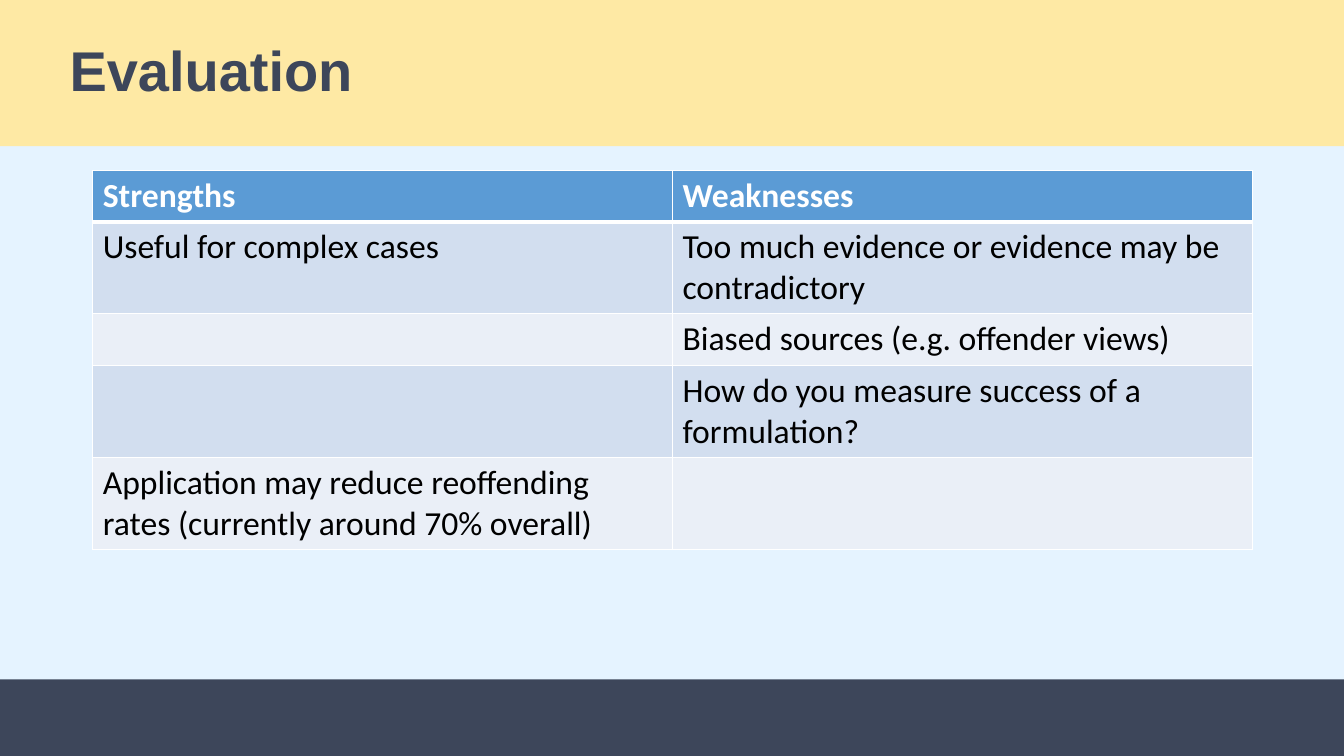
from lxml.etree import SubElement
from pptx import Presentation
from pptx.dml.color import RGBColor as RGB
from pptx.enum.shapes import MSO_SHAPE as SHAPE
from pptx.enum.text import MSO_ANCHOR as ANCHOR, PP_ALIGN as ALIGN
from pptx.oxml.ns import qn
from pptx.util import Pt

PX = 9144
COLORS = {
    "sky": "E5F3FF", "navy": "3D465A", "cream": "FEE9A4", "header": "5B9BD5",
    "odd": "D2DEEF", "even": "EAEFF7", "white": "FFFFFF", "black": "000000",
}
ROWS = [
    ("Strengths", "Weaknesses"),
    ("Useful for complex cases", "Too much evidence or evidence may be contradictory"),
    ("", "Biased sources (e.g. offender views)"),
    ("", "How do you measure success of a formulation?"),
    ("Application may reduce reoffending rates (currently around 70% overall)", ""),
]
ROW_HEIGHTS = [51, 91, 51, 91, 91]


class Slide:
    def __init__(self, prs):
        self.s = prs.slides.add_slide(prs.slide_layouts[6])
        self.body_font, self.title_font = "Calibri", "Arial"
        fill = self.s.background.fill
        fill.solid()
        fill.fore_color.rgb = self.color("sky")

    def color(self, name):
        return RGB.from_string(COLORS[name])

    def style(self, p, font, size, color, bold):
        for r in p.runs:
            r.font.name, r.font.size, r.font.bold = font, Pt(size), bold
            r.font.color.rgb = self.color(color)

    def band(self, y, h, color):
        sp = self.s.shapes.add_shape(SHAPE.RECTANGLE, 0, y * PX, 1333 * PX, h * PX)
        sp.shadow.inherit = False
        sp.fill.solid()
        sp.fill.fore_color.rgb = self.color(color)
        sp.line.fill.background()
        return sp

    def title(self, text, h):
        tf = self.band(0, h, "cream").text_frame
        tf.word_wrap = True
        tf.vertical_anchor = ANCHOR.MIDDLE
        tf.margin_left = 69 * PX
        p = tf.paragraphs[0]
        p.text = text
        p.alignment, p.line_spacing = ALIGN.LEFT, 0.9
        self.style(p, self.title_font, 40, "navy", True)

    def border(self, cell, side, width):
        ln = SubElement(cell._tc.get_or_add_tcPr(), qn(f"a:ln{side}"), w=str(Pt(width)))
        fill = SubElement(ln, qn("a:solidFill"))
        SubElement(fill, qn("a:srgbClr"), val=COLORS["white"])

    def cell(self, cell, text, row):
        header = row == 0
        thick = {"B": 3} if header else {"T": 3} if row == 1 else {}
        for side in "LRTB":
            self.border(cell, side, thick.get(side, 1))
        cell.fill.solid()
        cell.fill.fore_color.rgb = self.color("header" if header else "odd" if row % 2 else "even")
        p = cell.text_frame.paragraphs[0]
        p.text = text
        self.style(p, self.body_font, 24, "white" if header else "black", header)

    def table(self, x, y, w, rows, heights):
        cols = len(rows[0])
        table = self.s.shapes.add_table(
            len(rows), cols, x * PX, y * PX, w * PX, sum(heights) * PX).table
        for i, (texts, h) in enumerate(zip(rows, heights)):
            table.rows[i].height = h * PX
            for j, text in enumerate(texts):
                self.cell(table.cell(i, j), text, i)


def main():
    prs = Presentation()
    prs.slide_width, prs.slide_height = 1333 * PX, 750 * PX
    slide = Slide(prs)
    slide.band(674, 76, "navy")
    slide.title("Evaluation", 145)
    slide.table(92, 169, 1150, ROWS, ROW_HEIGHTS)
    prs.save("out.pptx")


if __name__ == "__main__":
    main()
